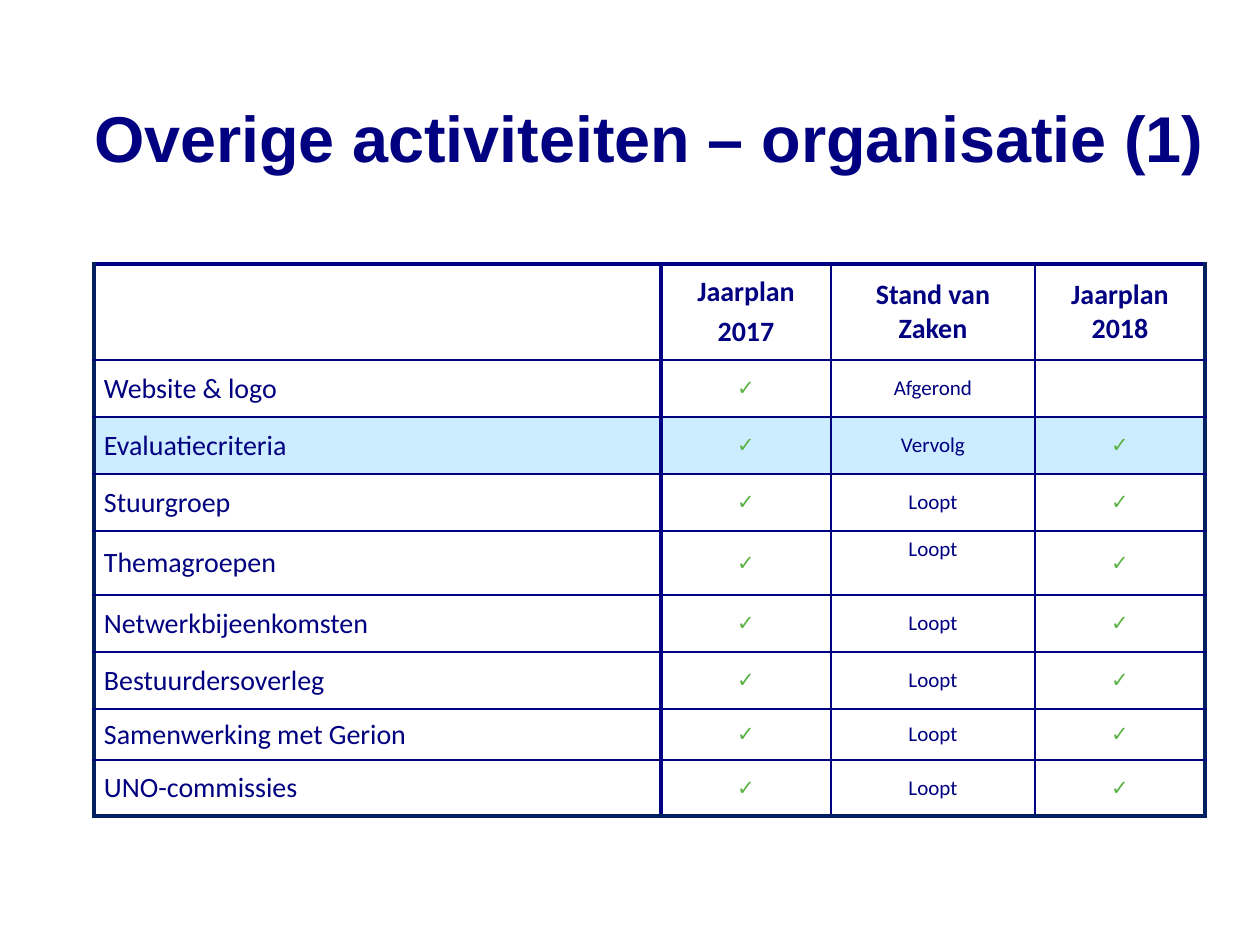
from dataclasses import dataclass

from lxml.etree import SubElement
from pptx import Presentation
from pptx.dml.color import RGBColor
from pptx.enum.text import MSO_ANCHOR, MSO_AUTO_SIZE, PP_ALIGN
from pptx.oxml.ns import qn
from pptx.util import Emu, Pt


@dataclass(frozen=True)
class Theme:
    navy: str = "000080"
    frame: str = "002060"
    green: str = "5BB244"
    highlight: str = "CCECFF"
    white: str = "FFFFFF"
    title_font: str = "Arial"
    table_font: str = "Calibri"
    title_size: int = 37
    label_size: int = 16
    status_size: int = 12
    thick: int = 3
    thin: int = 1


THEME = Theme()
EMU_PER_PX = 914400 / 126

CHECK = "✓"
HEADER = ("", "Jaarplan\n2017", "Stand van Zaken", "Jaarplan 2018")
ACTIVITIES = (
    ("Website & logo", CHECK, "Afgerond", ""),
    ("Evaluatiecriteria", CHECK, "Vervolg", CHECK),
    ("Stuurgroep", CHECK, "Loopt", CHECK),
    ("Themagroepen", CHECK, "Loopt", CHECK),
    ("Netwerkbijeenkomsten", CHECK, "Loopt", CHECK),
    ("Bestuurdersoverleg", CHECK, "Loopt", CHECK),
    ("Samenwerking met Gerion", CHECK, "Loopt", CHECK),
    ("UNO-commissies", CHECK, "Loopt", CHECK),
)
HIGHLIGHTED_ROW = 2
TOP_ANCHORED_CELL = (4, 2)
COLUMN_WIDTHS = (567, 170, 204, 170)
ROW_HEIGHTS = (96, 57, 57, 57, 64, 57, 57, 51, 56)


def px(length):
    return Emu(round(length * EMU_PER_PX))


def style_font(font, name, size, color, bold):
    font.name = name
    font.size = Pt(size)
    font.bold = bold
    font.color.rgb = RGBColor.from_string(color)


def add_title(slide, wording):
    title = slide.shapes.title
    title.left, title.top, title.width, title.height = map(px, (94, 66, 1181, 142))
    frame = title.text_frame
    frame.text = wording
    frame.word_wrap = True
    frame.auto_size = MSO_AUTO_SIZE.NONE
    frame.vertical_anchor = MSO_ANCHOR.MIDDLE
    frame.margin_left = frame.margin_right = 0
    frame.margin_top = frame.margin_bottom = 0
    heading = frame.paragraphs[0]
    heading.alignment = PP_ALIGN.LEFT
    style_font(heading.font, THEME.title_font, THEME.title_size, THEME.navy, True)


def fill_cell(cell, row, column, wording):
    cell.margin_left = cell.margin_right = px(10)
    cell.margin_top = cell.margin_bottom = px(6)
    top_anchored = (row, column) == TOP_ANCHORED_CELL
    cell.vertical_anchor = MSO_ANCHOR.TOP if top_anchored else MSO_ANCHOR.MIDDLE
    cell.fill.solid()
    background = THEME.highlight if row == HIGHLIGHTED_ROW else THEME.white
    cell.fill.fore_color.rgb = RGBColor.from_string(background)

    cell.text = wording
    size = THEME.label_size if row == 0 or column == 0 else THEME.status_size
    color = THEME.green if wording == CHECK else THEME.navy
    bold = row == 0 or wording == CHECK
    for index, paragraph in enumerate(cell.text_frame.paragraphs):
        paragraph.alignment = PP_ALIGN.CENTER if column else PP_ALIGN.LEFT
        if index:
            paragraph.space_before = Pt(3)
        style_font(paragraph.font, THEME.table_font, size, color, bold)


def border_cell(cell, row, column):
    inner = (THEME.navy, THEME.thin)
    divider = (THEME.navy, THEME.thick)
    outer = (THEME.frame, THEME.thick)
    last_row, last_column = len(ROW_HEIGHTS) - 1, len(COLUMN_WIDTHS) - 1
    edges = {
        "a:lnL": {0: outer, 1: divider}.get(column, inner),
        "a:lnR": {0: divider, last_column: outer}.get(column, inner),
        "a:lnT": divider if row == 0 else inner,
        "a:lnB": outer if row == last_row else inner,
    }
    properties = cell._tc.get_or_add_tcPr()
    for position, (edge, (color, width)) in enumerate(edges.items()):
        line = SubElement(properties, qn(edge), w=str(Pt(width)))
        properties.insert(position, line)
        SubElement(SubElement(line, qn("a:solidFill")), qn("a:srgbClr"), val=color)


def add_activity_table(slide):
    rows = (HEADER, *ACTIVITIES)
    table = slide.shapes.add_table(
        len(rows), len(HEADER), px(94), px(264),
        px(sum(COLUMN_WIDTHS)), px(sum(ROW_HEIGHTS)),
    ).table
    table.horz_banding = False
    for column, width in zip(table.columns, COLUMN_WIDTHS):
        column.width = px(width)
    for row, height in zip(table.rows, ROW_HEIGHTS):
        row.height = px(height)
    for row, wordings in enumerate(rows):
        for column, wording in enumerate(wordings):
            cell = table.cell(row, column)
            fill_cell(cell, row, column, wording)
            border_cell(cell, row, column)


def main():
    presentation = Presentation()
    presentation.slide_width = px(1260)
    presentation.slide_height = px(945)
    slide = presentation.slides.add_slide(presentation.slide_layouts[5])
    add_title(slide, "Overige activiteiten – organisatie (1)")
    add_activity_table(slide)
    presentation.save("out.pptx")


if __name__ == "__main__":
    main()
